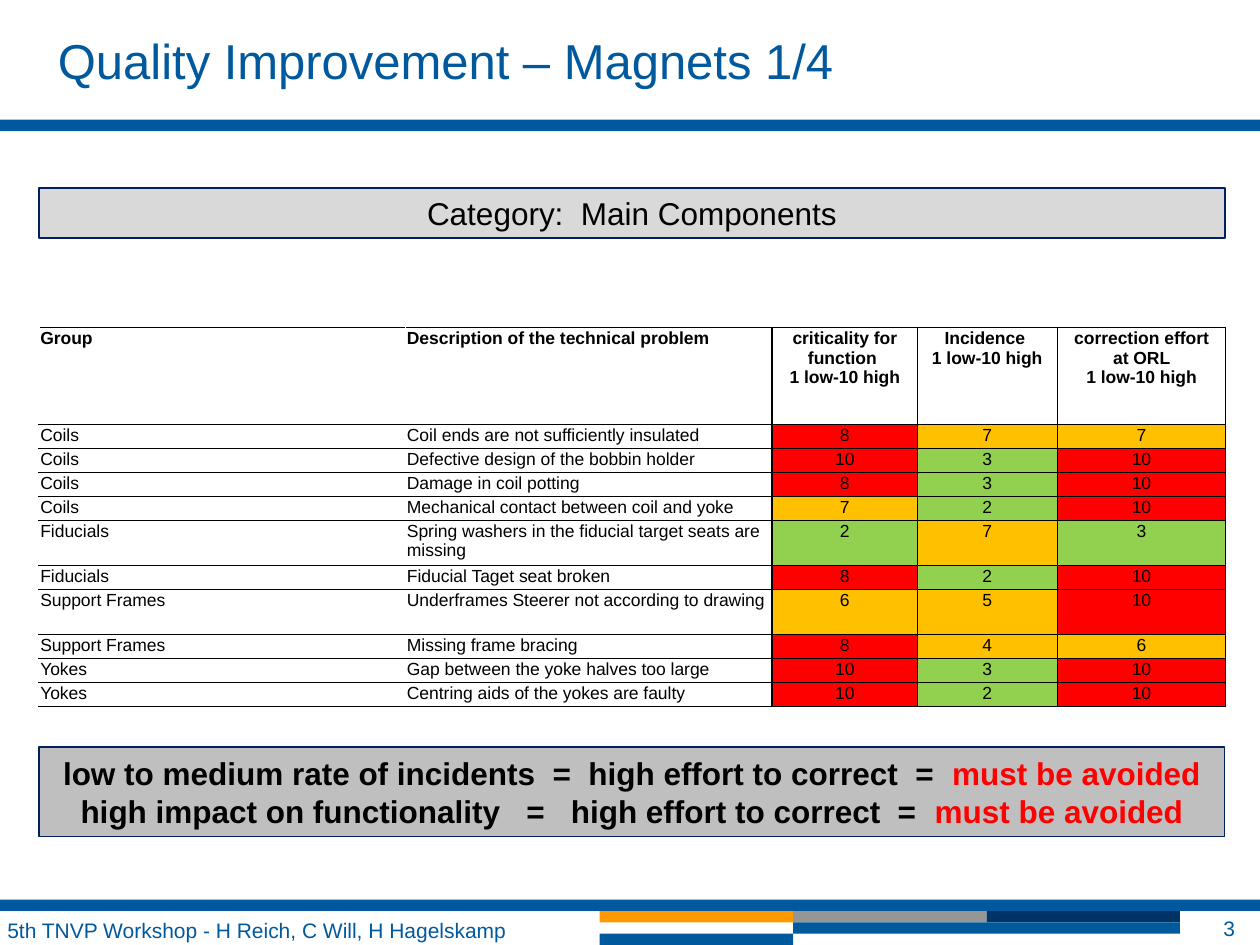
from dataclasses import dataclass

from lxml import etree
from pptx import Presentation
from pptx.dml.color import RGBColor
from pptx.enum.shapes import MSO_SHAPE
from pptx.enum.text import MSO_ANCHOR, PP_ALIGN
from pptx.oxml.ns import qn
from pptx.util import Inches, Pt

RECTANGLE = MSO_SHAPE.RECTANGLE
LEFT, CENTER, RIGHT = PP_ALIGN.LEFT, PP_ALIGN.CENTER, PP_ALIGN.RIGHT
TOP, MIDDLE = MSO_ANCHOR.TOP, MSO_ANCHOR.MIDDLE

FONT = "Arial"
BLACK = RGBColor(0x00, 0x00, 0x00)
BLUE = RGBColor(0x00, 0x59, 0x9D)
NAVY = RGBColor(0x00, 0x33, 0x66)
OUTLINE = RGBColor(0x00, 0x20, 0x60)
ORANGE = RGBColor(0xFF, 0x99, 0x00)
GRAY = RGBColor(0x96, 0x96, 0x96)
LIGHT_GRAY = RGBColor(0xD9, 0xD9, 0xD9)
MEDIUM_GRAY = RGBColor(0xBF, 0xBF, 0xBF)
RED = RGBColor(0xFF, 0x00, 0x00)
AMBER = RGBColor(0xFF, 0xC0, 0x00)
GREEN = RGBColor(0x92, 0xD0, 0x50)

MARGIN, CONTENT_WIDTH = 0.31, 9.41
BAND, STRIPE = 0.09, 1.535
STRIPES_LEFT, FOOTER_TOP = 4.76, 7.23
COLUMN_WIDTHS = (2.91, 2.91, 1.15, 1.11, 1.34)
HEADER_HEIGHT, LINE_HEIGHT, TALL_HEIGHT = 0.77, 0.19, 0.36
THIN, HEADER_RULE, DIVIDER = 0.5, 1, 1.5
FIRST_SCORE = 2


@dataclass(frozen=True)
class Box:
    left: float
    top: float
    width: float
    height: float

    def lengths(self) -> tuple:
        return tuple(Inches(v) for v in (self.left, self.top, self.width, self.height))


@dataclass(frozen=True)
class Band:
    box: Box
    color: RGBColor


@dataclass(frozen=True)
class Label:
    box: Box
    text: str
    size: int
    align: PP_ALIGN = LEFT
    anchor: MSO_ANCHOR = TOP
    margins: tuple = (0.1, 0.05, 0.1, 0.05)


@dataclass(frozen=True)
class Problem:
    group: str
    description: str
    scores: tuple
    height: float = LINE_HEIGHT


BANDS = (
    *(Band(Box(STRIPES_LEFT + i * STRIPE, FOOTER_TOP, STRIPE, BAND), color)
      for i, color in enumerate((ORANGE, GRAY, NAVY))),
    Band(Box(0, FOOTER_TOP - BAND, 10, BAND), BLUE),
    Band(Box(STRIPES_LEFT + STRIPE, FOOTER_TOP + BAND, 2 * STRIPE, BAND), BLUE),
    Band(Box(STRIPES_LEFT, FOOTER_TOP + 2 * BAND, STRIPE, BAND), BLUE),
    Band(Box(0, 0.95, 10, BAND), BLUE),
)
LABELS = (
    Label(Box(0.46, 0.24, 9.41, 0.43), "Quality Improvement – Magnets 1/4", 28,
          margins=(0, 0, 0, 0)),
    Label(Box(-0.04, FOOTER_TOP, 4.8, 0.27),
          "5th TNVP Workshop - H Reich, C Will, H Hagelskamp", 12),
    Label(Box(9.1, FOOTER_TOP, 0.8, 0.27), "3", 12, RIGHT, MIDDLE, (0.1, 0, 0.1, 0)),
)
HEADINGS = (
    "Group",
    "Description of the technical problem",
    "criticality for function \v1 low-10 high",
    "Incidence \v1 low-10 high",
    "correction effort\v at ORL \v1 low-10 high",
)
PROBLEMS = (
    Problem("Coils", "Coil ends are not sufficiently insulated", (8, 7, 7)),
    Problem("Coils", "Defective design of the bobbin holder", (10, 3, 10)),
    Problem("Coils", "Damage in coil potting", (8, 3, 10)),
    Problem("Coils", "Mechanical contact between coil and yoke", (7, 2, 10)),
    Problem("Fiducials", "Spring washers in the fiducial target seats are missing",
            (2, 7, 3), TALL_HEIGHT),
    Problem("Fiducials", "Fiducial Taget seat broken", (8, 2, 10)),
    Problem("Support Frames", "Underframes Steerer not according to drawing",
            (6, 5, 10), TALL_HEIGHT),
    Problem("Support Frames", "Missing frame bracing", (8, 4, 6)),
    Problem("Yokes", "Gap between the yoke halves too large", (10, 3, 10)),
    Problem("Yokes", "Centring aids of the yokes are faulty", (10, 2, 10)),
)
WARNING = "must be avoided"
CONCLUSIONS = (
    "low to medium rate of incidents  =  high effort to correct  =  ",
    "high impact on functionality   =   high effort to correct  =  ",
)


def style_run(run, size: int, color: RGBColor, bold: bool = False) -> None:
    run.font.name = FONT
    run.font.size = Pt(size)
    run.font.bold = bold
    run.font.color.rgb = color


def set_margins(target, margins: tuple) -> None:
    (target.margin_left, target.margin_top,
     target.margin_right, target.margin_bottom) = map(Inches, margins)


def add_rectangle(slide, box: Box, color: RGBColor, line_width: float = 0):
    rectangle = slide.shapes.add_shape(RECTANGLE, *box.lengths())
    rectangle.shadow.inherit = False
    rectangle.fill.solid()
    rectangle.fill.fore_color.rgb = color
    if line_width:
        rectangle.line.color.rgb = OUTLINE
        rectangle.line.width = Pt(line_width)
    else:
        rectangle.line.fill.background()
    return rectangle


def add_label(slide, label: Label) -> None:
    frame = slide.shapes.add_textbox(*label.box.lengths()).text_frame
    frame.word_wrap = True
    frame.vertical_anchor = label.anchor
    set_margins(frame, label.margins)
    frame.text = label.text
    frame.paragraphs[0].alignment = label.align
    style_run(frame.paragraphs[0].runs[0], label.size, BLUE)


def add_panel(slide, box: Box, color: RGBColor, line_width: float,
              lines: tuple, bold: bool) -> None:
    frame = add_rectangle(slide, box, color, line_width).text_frame
    frame.word_wrap = True
    frame.text = "\n".join(lines)
    for paragraph in frame.paragraphs:
        paragraph.alignment = CENTER
        style_run(paragraph.runs[0], 18, BLACK, bold)
        if bold:
            warning = paragraph.add_run()
            warning.text = WARNING
            style_run(warning, 18, RED, bold)


def score_color(score: int) -> RGBColor:
    return GREEN if score <= 3 else AMBER if score <= 7 else RED


def set_border(cell, side: str, width: float) -> None:
    properties = cell._tc.get_or_add_tcPr()
    line = etree.SubElement(properties, qn(f"a:ln{side}"), w=str(int(Pt(width))))
    fill = etree.SubElement(line, qn("a:solidFill"))
    etree.SubElement(fill, qn("a:srgbClr"), val=str(BLACK))


def fill_cell(cell, row: int, column: int, value) -> None:
    cell.text_frame.text = str(value)
    set_margins(cell, (0.01, 0.01, 0.01, 0))
    is_score = column >= FIRST_SCORE
    for paragraph in cell.text_frame.paragraphs:
        paragraph.alignment = CENTER if is_score else LEFT
        for run in paragraph.runs:
            style_run(run, 10, BLACK, row == 0)
    if is_score:
        set_border(cell, "L", DIVIDER if column == FIRST_SCORE else THIN)
    if column >= FIRST_SCORE - 1:
        set_border(cell, "R", THIN if is_score else DIVIDER)
    set_border(cell, "T", HEADER_RULE if row == 1 else THIN)
    set_border(cell, "B", HEADER_RULE if row == 0 else THIN)
    if is_score and row:
        cell.fill.solid()
        cell.fill.fore_color.rgb = score_color(value)
    else:
        cell.fill.background()


def add_problem_table(slide) -> None:
    rows = [HEADINGS, *((p.group, p.description, *p.scores) for p in PROBLEMS)]
    heights = [HEADER_HEIGHT, *(p.height for p in PROBLEMS)]
    box = Box(MARGIN, 2.6, CONTENT_WIDTH, sum(heights))
    table = slide.shapes.add_table(len(rows), len(HEADINGS), *box.lengths()).table
    table.first_row = table.horz_banding = False
    for column, width in zip(table.columns, COLUMN_WIDTHS):
        column.width = Inches(width)
    for r, (values, height) in enumerate(zip(rows, heights)):
        table.rows[r].height = Inches(height)
        for c, value in enumerate(values):
            fill_cell(table.cell(r, c), r, c, value)


def main() -> None:
    deck = Presentation()
    deck.slide_width, deck.slide_height = Inches(10), Inches(7.5)
    slide = deck.slides.add_slide(deck.slide_layouts[6])
    for band in BANDS:
        add_rectangle(slide, band.box, band.color)
    for label in LABELS:
        add_label(slide, label)
    add_panel(slide, Box(MARGIN, 1.49, CONTENT_WIDTH, 0.4), LIGHT_GRAY, 1.25,
              ("Category:  Main Components",), False)
    add_problem_table(slide)
    add_panel(slide, Box(MARGIN, 5.93, CONTENT_WIDTH, 0.71), MEDIUM_GRAY, 1,
              CONCLUSIONS, True)
    deck.save("out.pptx")


if __name__ == "__main__":
    main()
